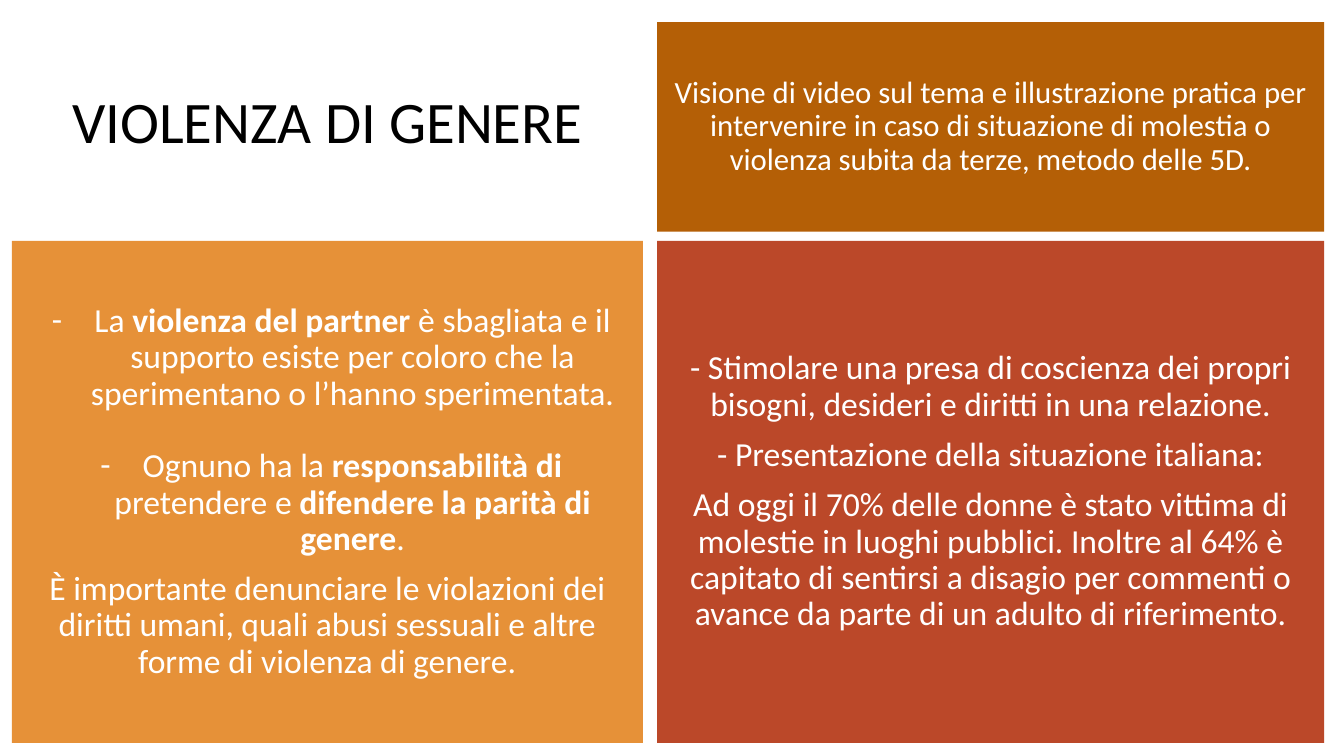
from lxml.etree import SubElement
from pptx import Presentation
from pptx.dml.color import RGBColor
from pptx.enum.shapes import MSO_SHAPE as Preset
from pptx.enum.text import MSO_ANCHOR as Anchor, MSO_AUTO_SIZE as AutoSize, PP_ALIGN as Align
from pptx.oxml.ns import qn
from pptx.util import Cm, Pt

LEFT, TOP = 0.3, 0.56
TOP_HEIGHT, BOTTOM_HEIGHT = 5.28, 12.65
LEFT_WIDTH, RIGHT_WIDTH = 15.9, 16.81
RIGHT, BOTTOM = 16.56, 6.07

PARTNER = ("La *violenza del partner *è sbagliata e il supporto esiste per coloro "
           "che la sperimentano o l’hanno sperimentata.")
EQUALITY = "Ognuno ha la *responsabilità di *pretendere e *difendere la parità di genere*."
REPORTING = ("È importante denunciare le violazioni dei diritti umani, quali abusi sessuali "
             "e altre forme di violenza di genere.")
AWARENESS = ("- Stimolare una presa di coscienza dei propri bisogni, desideri e diritti "
             "in una relazione.")
ITALY = "- Presentazione della situazione italiana:"
FIGURES = ("Ad oggi il 70% delle donne è stato vittima di molestie in luoghi pubblici. "
           "Inoltre al 64% è capitato di sentirsi a disagio per commenti o avance da parte "
           "di un adulto di riferimento.")
VIDEO = ("Visione di video sul tema e illustrazione pratica per intervenire in caso di "
         "situazione di molestia o violenza subita da terze, metodo delle 5D.")


def color(value):
    return RGBColor.from_string(value)


class ViolenceSlide:
    font_name = "Calibri"
    light = "FFFFFF"
    dark = "000000"

    def __init__(self, presentation):
        self.slide = presentation.slides.add_slide(presentation.slide_layouts[3])

    def place(self, shape, left, top, width, height, inset=0.25):
        shape.left, shape.top = Cm(left), Cm(top)
        shape.width, shape.height = Cm(width), Cm(height)
        frame = shape.text_frame
        frame.word_wrap = True
        frame.auto_size = AutoSize.NONE
        frame.vertical_anchor = Anchor.MIDDLE
        frame.margin_left = frame.margin_right = Cm(0.25)
        frame.margin_top = frame.margin_bottom = Cm(inset)

    def title(self, text, *box):
        shape = self.slide.shapes.title
        self.place(shape, *box, inset=0.13)
        self.add_text(shape.text_frame.paragraphs[0], text, 42, self.dark, spacing=0.8)

    def panel(self, paragraphs, fill, *box, size=24, alpha=None, placeholder=None):
        if placeholder is None:
            shape = self.slide.shapes.add_shape(Preset.RECTANGLE, 0, 0, 0, 0)
            shape.shadow.inherit = False
        else:
            shape = self.slide.placeholders[placeholder]
        self.place(shape, *box)
        shape.fill.solid()
        shape.fill.fore_color.rgb = color(fill)
        shape.line.fill.background()
        if alpha is not None:
            fill_color = shape.element.spPr.find(qn("a:solidFill"))[0]
            SubElement(fill_color, qn("a:alpha"), val=str(alpha * 1000))
        frame = shape.text_frame
        for index, (text, bulleted, before) in enumerate(paragraphs):
            paragraph = frame.add_paragraph() if index else frame.paragraphs[0]
            self.bullet(paragraph, bulleted)
            self.add_text(paragraph, text, size, self.light, before=before)

    def bullet(self, paragraph, bulleted):
        properties = paragraph._p.get_or_add_pPr()
        properties.set("marL", str(Cm(1.27 if bulleted else 0)))
        properties.set("indent", str(Cm(-1.07 if bulleted else 0)))
        if bulleted:
            bullet_color = SubElement(properties, qn("a:buClr"))
            SubElement(bullet_color, qn("a:srgbClr"), val=self.light)
            SubElement(properties, qn("a:buFont"), typeface=self.font_name)
            SubElement(properties, qn("a:buChar"), char="-")
        else:
            SubElement(properties, qn("a:buNone"))

    def add_text(self, paragraph, text, size, font_color, spacing=0.9, before=0):
        paragraph.alignment = Align.CENTER
        paragraph.line_spacing = spacing
        paragraph.space_before = Pt(before)
        paragraph.space_after = Pt(0)
        for index, part in enumerate(text.split("*")):
            run = paragraph.add_run()
            run.text = part
            run.font.name = self.font_name
            run.font.size = Pt(size)
            run.font.bold = index % 2 == 1
            run.font.color.rgb = color(font_color)


def main():
    presentation = Presentation()
    presentation.slide_width, presentation.slide_height = Cm(33.87), Cm(19.05)
    page = ViolenceSlide(presentation)
    page.title("VIOLENZA DI GENERE", LEFT, TOP, LEFT_WIDTH, TOP_HEIGHT)
    page.panel([(VIDEO, False, 0)], "B45F06",
               RIGHT, TOP, RIGHT_WIDTH, TOP_HEIGHT, size=22)
    page.panel([(PARTNER, True, 0), (EQUALITY, True, 26), (REPORTING, False, 10)],
               "E69138", LEFT, BOTTOM, LEFT_WIDTH, BOTTOM_HEIGHT, placeholder=1)
    page.panel([(AWARENESS, False, 0), (ITALY, False, 10), (FIGURES, False, 10)],
               "B43512", RIGHT, BOTTOM, RIGHT_WIDTH, BOTTOM_HEIGHT,
               alpha=90, placeholder=2)
    presentation.save("out.pptx")


if __name__ == "__main__":
    main()
